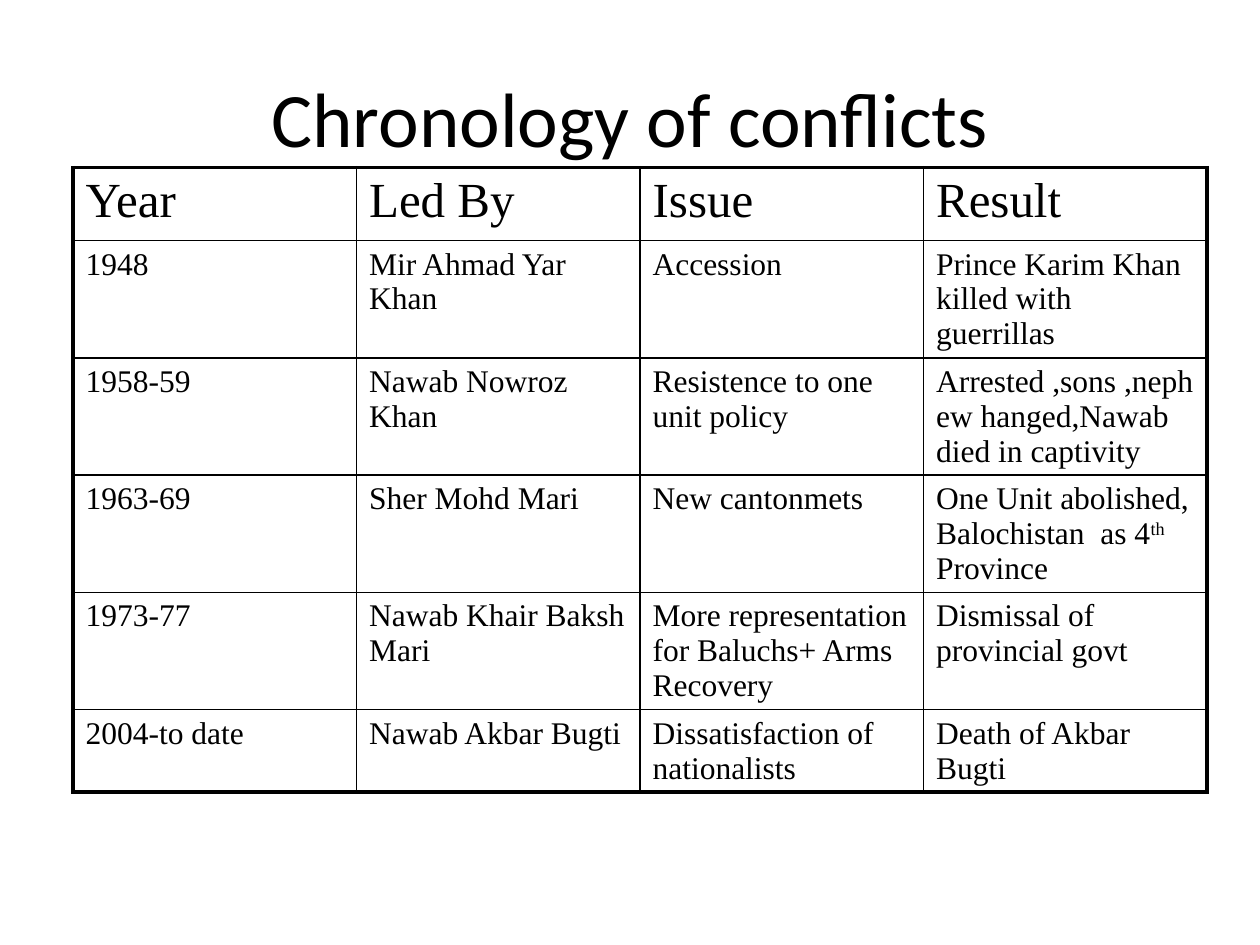
from dataclasses import dataclass

from lxml import etree
from pptx import Presentation
from pptx import util as u
from pptx.dml.color import RGBColor
from pptx.enum import text
from pptx.oxml.ns import qn

BLACK = RGBColor(0x00, 0x00, 0x00)
TITLE_FONT, TABLE_FONT = "Calibri", "Times New Roman"
THICK, THIN = u.Pt(2.25), u.Pt(1)
COLUMNS = ("Year", "Led By", "Issue", "Result")
HEADER_HEIGHT, LINE_HEIGHT, CELL_PADDING = 0.58, 0.28, 0.09


@dataclass(frozen=True)
class Conflict:
    year: str
    leader: str
    issue: str
    result: str
    lines: int = 3

    @property
    def entries(self) -> tuple[str, ...]:
        return self.year, self.leader, self.issue, self.result


# A caret pair encloses raised text.
CONFLICTS = (
    Conflict("1948", "Mir Ahmad Yar Khan", "Accession",
             "Prince Karim Khan killed with guerrillas"),
    Conflict("1958-59", "Nawab Nowroz Khan", "Resistence to one unit policy",
             "Arrested ,sons ,nephew hanged,Nawab died in captivity"),
    Conflict("1963-69", "Sher Mohd Mari", "New cantonmets",
             "One Unit abolished, Balochistan  as 4^th^ Province"),
    Conflict("1973-77", "Nawab Khair Baksh Mari",
             "More representation for Baluchs+ Arms Recovery",
             "Dismissal of provincial govt"),
    Conflict("2004-to date", "Nawab Akbar Bugti", "Dissatisfaction of nationalists",
             "Death of Akbar Bugti", lines=2),
)


def format_font(font, name: str, size: float) -> None:
    for key, value in {"name": name, "size": u.Pt(size), "bold": False}.items():
        setattr(font, key, value)
    font.color.rgb = BLACK


def write_entry(cell, entry: str, size: float) -> None:
    para = cell.text_frame.paragraphs[0]
    for index, part in enumerate(entry.split("^")):
        span = para.add_run()
        span.text = part
        format_font(span.font, TABLE_FONT, size)
        if index % 2:
            span.font._element.set("baseline", "30000")


def draw_borders(cell, widths: dict[str, int]) -> None:
    properties = cell._tc.get_or_add_tcPr()
    for side, width in widths.items():
        line = etree.SubElement(properties, qn(f"a:ln{side}"), w=str(width))
        fill = etree.SubElement(line, qn("a:solidFill"))
        etree.SubElement(fill, qn("a:srgbClr"), val=str(BLACK))


def add_title(deck, page) -> None:
    title = page.shapes.title
    place = {"left": 0.05 * deck.slide_width, "top": 0.04 * deck.slide_height,
             "width": 0.9 * deck.slide_width, "height": deck.slide_height / 6}
    for key, value in place.items():
        setattr(title, key, int(value))
    title.text_frame.text = "Chronology of conflicts"
    title.text_frame.vertical_anchor = text.MSO_ANCHOR.MIDDLE
    para = title.text_frame.paragraphs[0]
    para.alignment = text.PP_ALIGN.CENTER
    format_font(para.runs[0].font, TITLE_FONT, 44)


def add_chronology(deck, page) -> None:
    rows = [COLUMNS, *(conflict.entries for conflict in CONFLICTS)]
    heights = [HEADER_HEIGHT, *(LINE_HEIGHT * conflict.lines + CELL_PADDING
                                for conflict in CONFLICTS)]
    frame = page.shapes.add_table(
        len(rows), len(COLUMNS), u.Inches(0.58), u.Inches(1.33),
        int(0.9 * deck.slide_width), u.Inches(sum(heights)))
    table = frame.table
    table.first_row = table.horz_banding = False
    last_row, last_column = len(rows) - 1, len(COLUMNS) - 1
    for r, (entries, height) in enumerate(zip(rows, heights)):
        table.rows[r].height = u.Inches(height)
        for c, entry in enumerate(entries):
            cell = table.cell(r, c)
            write_entry(cell, entry, 28 if r == 0 else 18)
            draw_borders(cell, {
                "L": THICK if c == 0 else THIN,
                "R": THICK if c == last_column else THIN,
                "T": THICK if r == 0 else THIN,
                "B": THICK if r == last_row else THIN,
            })
            cell.fill.background()


def main() -> None:
    deck = Presentation()
    deck.slide_width, deck.slide_height = u.Inches(10), u.Inches(7.5)
    page = deck.slides.add_slide(deck.slide_layouts.get_by_name("Title Only"))
    add_title(deck, page)
    add_chronology(deck, page)
    deck.save("out.pptx")


if __name__ == "__main__":
    main()
